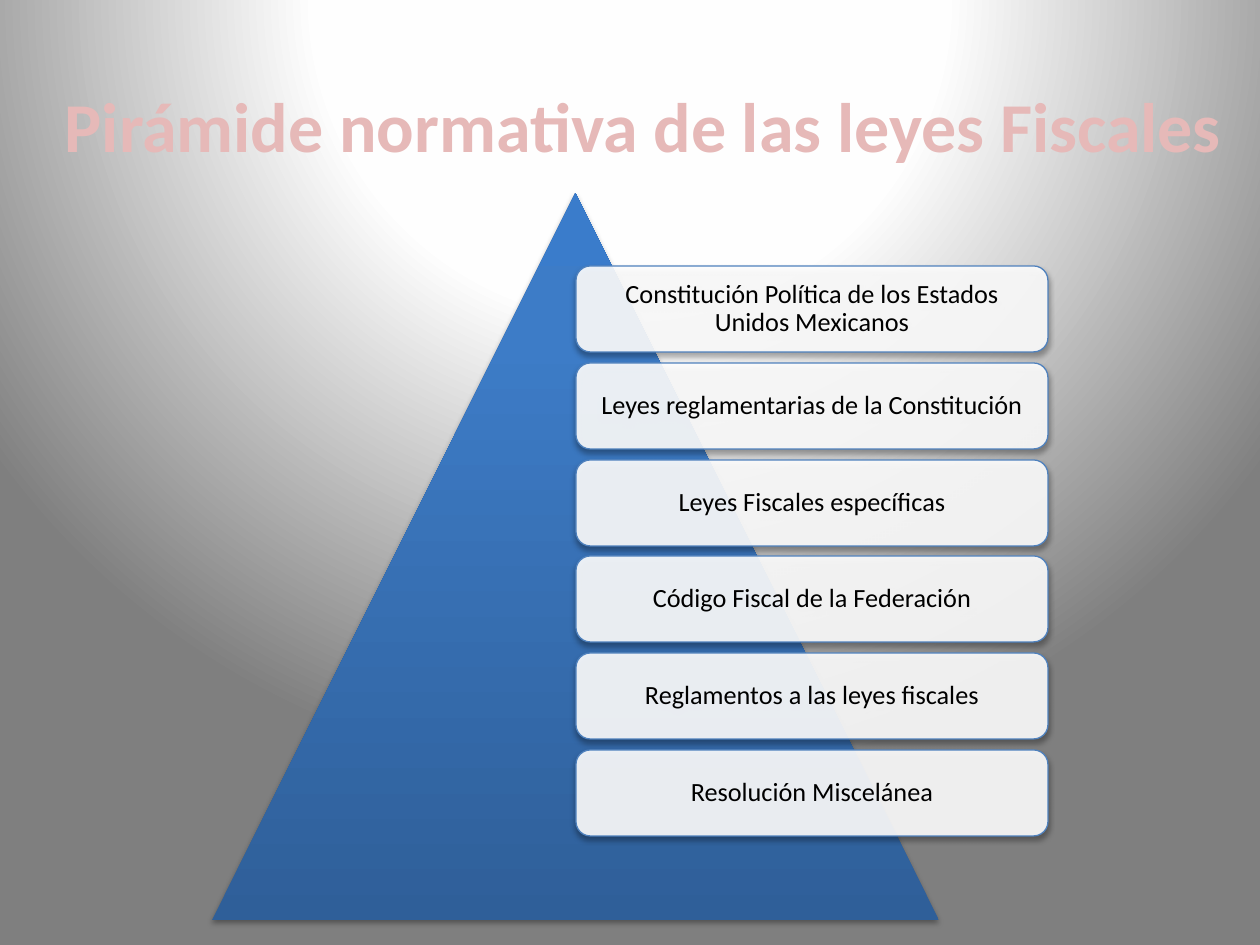
from dataclasses import dataclass

from lxml import etree
from pptx import Presentation
from pptx.dml.color import RGBColor
from pptx.enum.shapes import MSO_SHAPE
from pptx.enum.text import MSO_ANCHOR, MSO_AUTO_SIZE, PP_ALIGN
from pptx.oxml.ns import qn
from pptx.util import Emu, Pt

TRIANGLE = MSO_SHAPE.ISOSCELES_TRIANGLE
ROUNDED = MSO_SHAPE.ROUNDED_RECTANGLE
CENTER = PP_ALIGN.CENTER
MIDDLE = MSO_ANCHOR.MIDDLE
FIT_SHAPE = MSO_AUTO_SIZE.SHAPE_TO_FIT_TEXT

PX_PER_INCH = 126
TITLE_ONLY = 5


@dataclass(frozen=True)
class Theme:
    font: str = "Calibri"
    title_size: int = 40
    level_size: int = 15
    title: str = "E6B9B8"
    title_outline: str = "C0504D"
    level_text: str = "000000"
    level_fill: str = "FFFFFF"
    level_line: str = "4F81BD"
    shadow: str = "000000"
    backdrop: tuple = ((0, "FFFFFF"), (40, "FEFEFE"), (100, "7F7F7F"))
    pyramid: tuple = ((0, "2F5F99"), (80, "3D7CC7"), (100, "3A7CCB"))


@dataclass(frozen=True)
class Box:
    left: int
    top: int
    width: int
    height: int


THEME = Theme()
TITLE = "Pirámide normativa de las leyes Fiscales"
TITLE_BOX = Box(45, 76, 1196, 97)
PYRAMID_BOX = Box(212, 193, 727, 727)
LEVELS = (
    "Constitución Política de los Estados Unidos Mexicanos",
    "Leyes reglamentarias de la Constitución",
    "Leyes Fiscales específicas",
    "Código Fiscal de la Federación",
    "Reglamentos a las leyes fiscales",
    "Resolución Miscelánea",
)
FIRST_LEVEL_TOP, LAST_LEVEL_TOP = 266, 750
LEVEL_INSET = 12


def px(length: int) -> Emu:
    return Emu(round(length * 914400 / PX_PER_INCH))


def place(shape, box: Box) -> None:
    shape.left, shape.top = px(box.left), px(box.top)
    shape.width, shape.height = px(box.width), px(box.height)


def add_child(parent, tag: str, **attributes):
    values = {name: str(value) for name, value in attributes.items()}
    return etree.SubElement(parent, qn(tag), values)


def set_gradient(fill, owner, stops: tuple):
    fill.gradient()
    gradient = owner.find(".//" + qn("a:gradFill"))
    for child in list(gradient):
        gradient.remove(child)
    stop_list = add_child(gradient, "a:gsLst")
    for position, color in stops:
        stop = add_child(stop_list, "a:gs", pos=position * 1000)
        add_child(stop, "a:srgbClr", val=color)
    return gradient


def add_shadow(shape) -> None:
    shape.shadow.inherit = False
    effects = shape.element.spPr.find(qn("a:effectLst"))
    shadow = add_child(effects, "a:outerShdw", blurRad=Pt(3.1), dist=Pt(1.8),
                       dir=90 * 60000, rotWithShape=0)
    color = add_child(shadow, "a:srgbClr", val=THEME.shadow)
    add_child(color, "a:alpha", val=35000)


def style_text(paragraph, size: int, color: str, bold: bool = False) -> None:
    paragraph.alignment = CENTER
    for run in paragraph.runs:
        run.font.name = THEME.font
        run.font.size = Pt(size)
        run.font.bold = bold
        run.font.color.rgb = RGBColor.from_string(color)


def paint_background(slide) -> None:
    gradient = set_gradient(slide.background.fill, slide.element, THEME.backdrop)
    circle = add_child(gradient, "a:path", path="circle")
    add_child(circle, "a:fillToRect", l=50000, t=-80000, r=50000, b=180000)


def write_title(slide) -> None:
    title = slide.shapes.title
    place(title, TITLE_BOX)
    frame = title.text_frame
    frame.text = TITLE
    frame.word_wrap = False
    frame.auto_size = FIT_SHAPE
    heading = frame.paragraphs[0]
    style_text(heading, THEME.title_size, THEME.title, bold=True)
    properties = heading.runs[0].font._element
    outline = etree.Element(qn("a:ln"), {"w": str(Pt(1.75))})
    add_child(add_child(outline, "a:solidFill"), "a:srgbClr", val=THEME.title_outline)
    properties.insert(0, outline)


def draw_pyramid(slide, box: Box) -> None:
    pyramid = slide.shapes.add_shape(TRIANGLE, 0, 0, 0, 0)
    place(pyramid, box)
    gradient = set_gradient(pyramid.fill, pyramid.element, THEME.pyramid)
    add_child(gradient, "a:lin", ang=270 * 60000, scaled=0)
    pyramid.line.fill.background()
    add_shadow(pyramid)


def draw_level(slide, label: str, box: Box) -> None:
    level = slide.shapes.add_shape(ROUNDED, 0, 0, 0, 0)
    place(level, box)
    level.fill.solid()
    level.fill.fore_color.rgb = RGBColor.from_string(THEME.level_fill)
    fill_color = level.element.spPr.find(qn("a:solidFill")).find(qn("a:srgbClr"))
    add_child(fill_color, "a:alpha", val=90000)
    level.line.color.rgb = RGBColor.from_string(THEME.level_line)
    level.line.width = Pt(0.75)
    add_shadow(level)
    frame = level.text_frame
    frame.text = label
    frame.word_wrap = True
    frame.vertical_anchor = MIDDLE
    frame.margin_left = frame.margin_right = px(LEVEL_INSET)
    frame.margin_top = frame.margin_bottom = px(LEVEL_INSET)
    frame.paragraphs[0].line_spacing = 0.9
    style_text(frame.paragraphs[0], THEME.level_size, THEME.level_text)


def main() -> None:
    deck = Presentation()
    deck.slide_width, deck.slide_height = px(1260), px(945)
    slide = deck.slides.add_slide(deck.slide_layouts[TITLE_ONLY])
    paint_background(slide)
    write_title(slide)
    draw_pyramid(slide, PYRAMID_BOX)
    pitch = (LAST_LEVEL_TOP - FIRST_LEVEL_TOP) / (len(LEVELS) - 1)
    for index, label in enumerate(LEVELS):
        top = round(FIRST_LEVEL_TOP + index * pitch)
        draw_level(slide, label, Box(576, top, 472, 86))
    deck.save("out.pptx")


if __name__ == "__main__":
    main()
